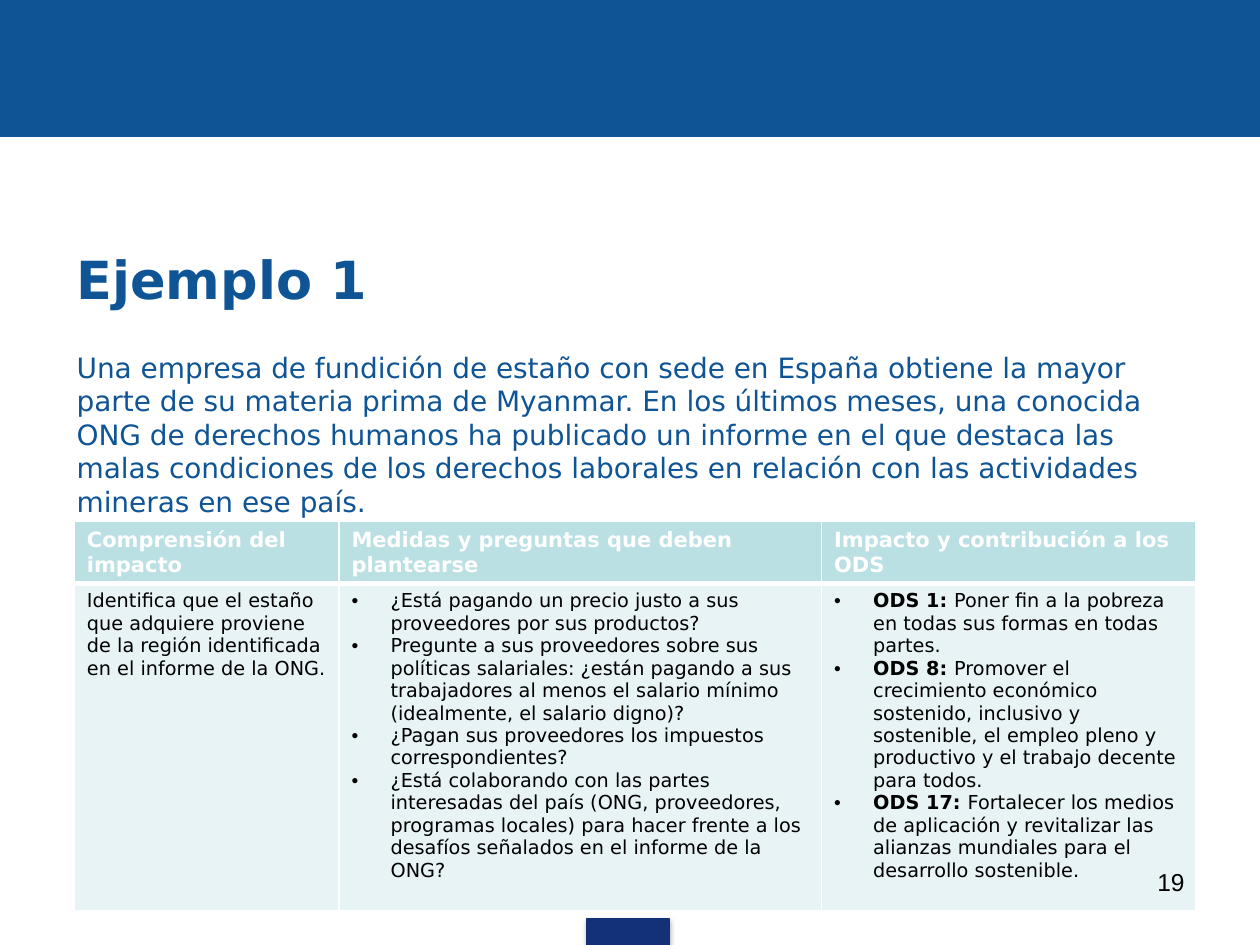
"""Build the "Ejemplo 1" slide: banner, case description and table of measures."""
from lxml.etree import SubElement
from pptx import Presentation
from pptx.dml.color import RGBColor
from pptx.enum.shapes import MSO_SHAPE as Shape
from pptx.enum.text import MSO_ANCHOR as Anchor, PP_ALIGN as Align
from pptx.oxml import parse_xml
from pptx.oxml.ns import nsdecls, qn
from pptx.util import Inches, Pt

UNIT = Inches(0.1)
BLUE, NAVY, WHITE, BLACK = "0F5494", "133176", "FFFFFF", "000000"
TEAL, PALE = "BBE0E3", "E7F3F4"


def color(value):
    return RGBColor.from_string(value)


def write(frame, entries, size, ink, bold=False, face="DejaVu Sans", bullets=False):
    frame.word_wrap = True
    for index, (lead, text) in enumerate(entries):
        para = frame.add_paragraph() if index else frame.paragraphs[0]
        if bullets:
            props = para._p.get_or_add_pPr()
            props.set("marL", str(Inches(0.31)))
            props.set("indent", str(-Inches(0.31)))
            SubElement(props, qn("a:buFont"), typeface="Arial")
            SubElement(props, qn("a:buChar"), char="•")
        para.font.size, para.font.name = Pt(size), face
        para.font.color.rgb = color(ink)
        if lead:
            span = para.add_run()
            span.text, span.font.bold = lead, True
        else:
            para.font.bold = bold
        para.add_run().text = text


deck = Presentation()
deck.slide_width, deck.slide_height = 100 * UNIT, 75 * UNIT
page = deck.slides.add_slide(deck.slide_layouts[6])

for spot, tint in [((0, 0, 100, 10.8), BLUE), ((46.6, 72.9, 6.5, 2.2), NAVY)]:
    bar = page.shapes.add_shape(Shape.RECTANGLE, *(int(part * UNIT) for part in spot))
    bar.shadow.inherit = False
    bar.fill.solid()
    bar.fill.fore_color.rgb = bar.line.color.rgb = color(tint)
    bar.line.width = Pt(0.75)
effects = bar._element.spPr.find(qn("a:effectLst"))
effects.append(parse_xml(
    f'<a:outerShdw {nsdecls("a")} blurRad="{Pt(3.1)}" dist="{Pt(1.8)}" dir="5400000" rotWithShape="0">'
    f'<a:srgbClr val="{BLACK}"><a:alpha val="35000"/></a:srgbClr></a:outerShdw>'))

headings = ["Comprensión del impacto", "Medidas y preguntas que deben plantearse",
            "Impacto y contribución a los ODS"]
impact = [("", "Identifica que el estaño que adquiere proviene de la región identificada en el "
               "informe de la ONG.")]
measures = [
    ("", "¿Está pagando un precio justo a sus proveedores por sus productos?"),
    ("", "Pregunte a sus proveedores sobre sus políticas salariales: ¿están pagando a sus "
         "trabajadores al menos el salario mínimo (idealmente, el salario digno)?"),
    ("", "¿Pagan sus proveedores los impuestos correspondientes?"),
    ("", "¿Está colaborando con las partes interesadas del país (ONG, proveedores, programas "
         "locales) para hacer frente a los desafíos señalados en el informe de la ONG?"),
]
goals = [
    ("ODS 1: ", "Poner fin a la pobreza en todas sus formas en todas partes."),
    ("ODS 8: ", "Promover el crecimiento económico sostenido, inclusivo y sostenible, el empleo "
                "pleno y productivo y el trabajo decente para todos."),
    ("ODS 17: ", "Fortalecer los medios de aplicación y revitalizar las alianzas mundiales para "
                 "el desarrollo sostenible."),
]

texts = [
    ((5.1, 17, 90, 10.2), "Ejemplo 1", 30, BLUE, True, "DejaVu Sans", Anchor.MIDDLE, Align.LEFT),
    ((5.1, 27.3, 90, 39.7),
     "Una empresa de fundición de estaño con sede en España obtiene la mayor parte de su materia "
     "prima de Myanmar. En los últimos meses, una conocida ONG de derechos humanos ha publicado un "
     "informe en el que destaca las malas condiciones de los derechos laborales en relación con "
     "las actividades mineras en ese país.",
     16, BLUE, False, "DejaVu Sans", Anchor.TOP, Align.LEFT),
    ((71.7, 68.3, 23.3, 5.2), "19", 14, BLACK, False, "Arial", Anchor.TOP, Align.RIGHT),
]

columns, rows = (21, 38.3, 29.7), (4.8, 26)
spot = (5.9, 41.4, sum(columns), sum(rows))
table = page.shapes.add_table(2, 3, *(int(part * UNIT) for part in spot)).table
for column, width in zip(table.columns, columns):
    column.width = int(width * UNIT)
for row, height in zip(table.rows, rows):
    row.height = int(height * UNIT)

for index, (heading, entries) in enumerate(zip(headings, [impact, measures, goals])):
    head, body = table.cell(0, index), table.cell(1, index)
    write(head.text_frame, [("", heading)], 12, WHITE, bold=True)
    write(body.text_frame, entries, 11, BLACK, bullets=len(entries) > 1)
    for cell, tint, rule in [(head, TEAL, 3), (body, PALE, 1)]:
        top = 1 if cell is head else 3
        for side, weight in [("L", 1), ("R", 1), ("T", top), ("B", rule)]:
            cell._tc.get_or_add_tcPr().append(parse_xml(
                f'<a:ln{side} {nsdecls("a")} w="{Pt(weight)}"><a:solidFill>'
                f'<a:srgbClr val="{WHITE}"/></a:solidFill></a:ln{side}>'))
        cell.fill.solid()
        cell.fill.fore_color.rgb = color(tint)

for spot, text, size, ink, bold, face, anchor, align in texts:
    box = page.shapes.add_textbox(*(int(part * UNIT) for part in spot))
    write(box.text_frame, [("", text)], size, ink, bold, face)
    box.text_frame.vertical_anchor = anchor
    box.text_frame.paragraphs[0].alignment = align

deck.save("out.pptx")
